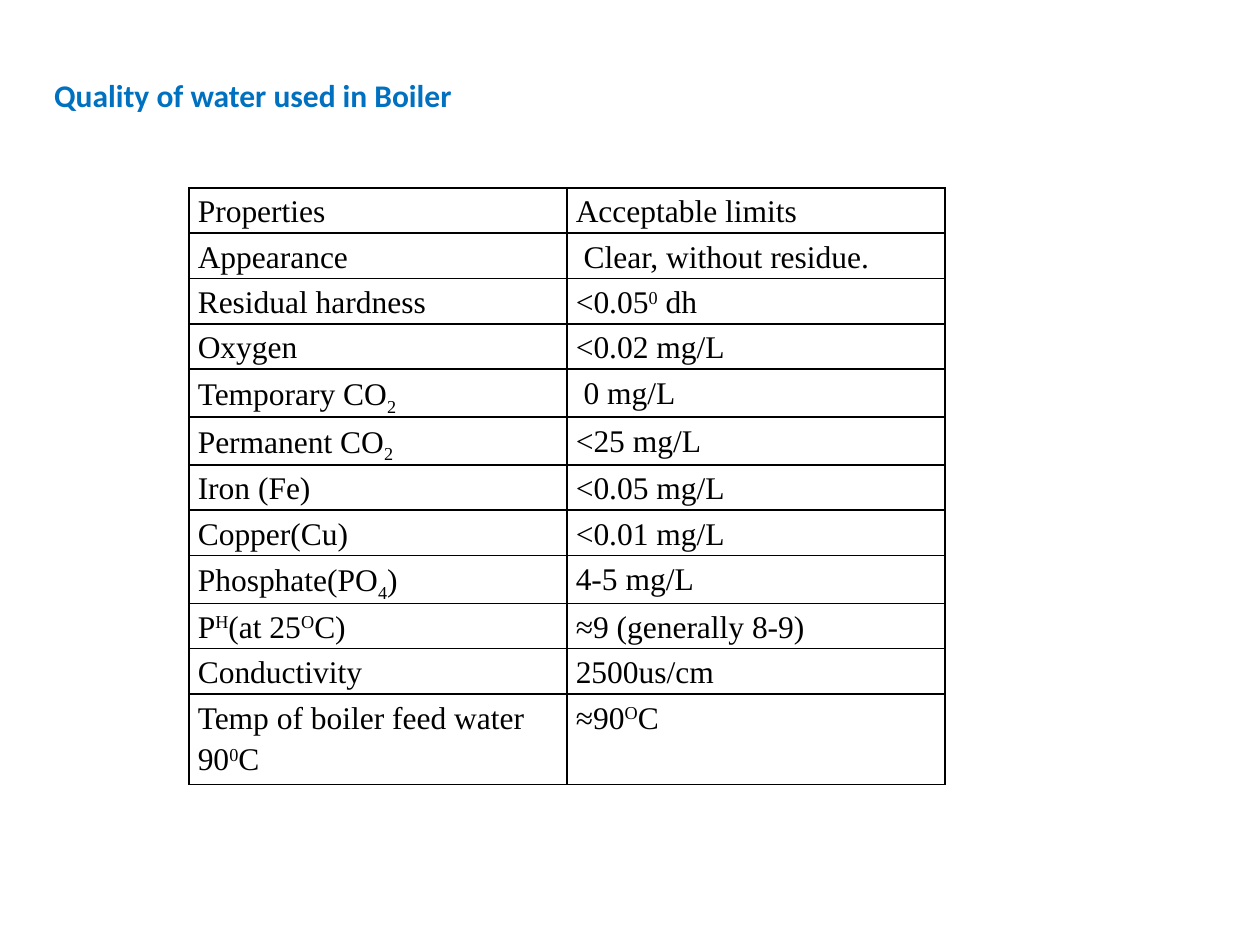
from lxml import etree
from pptx import Presentation
from pptx.dml.color import RGBColor
from pptx.enum import text
from pptx.oxml import ns
from pptx.util import Inches, Pt

COLORS = {"heading": "0070C0", "ink": "000000"}
BASELINES = {"^": "30000", "_": "-25000"}

# "|" parts the runs; a leading ^ raises a run and a leading _ lowers it.
WATER_LIMITS = [
    ("Properties", "Acceptable limits"),
    ("Appearance", " Clear, without residue."),
    ("Residual hardness", "<0.05|^0| dh"),
    ("Oxygen", "<0.02 mg/L"),
    ("Temporary CO|_2", " 0 mg/L"),
    ("Permanent CO|_2", "<25 mg/L"),
    ("Iron (Fe)", "<0.05 mg/L"),
    ("Copper(Cu)", "<0.01 mg/L"),
    ("Phosphate(PO|_4|)", "4-5 mg/L"),
    ("P|^H|(at 25|^O|C)", "≈9 (generally 8-9)"),
    ("Conductivity", "2500us/cm"),
    ("Temp of boiler feed water 90|^0|C", "≈90|^O|C"),
]


def write(frame, marked, font="Times New Roman", size=18, color="ink", bold=False):
    """Fill a text frame with runs, raising or lowering the marked ones."""
    paragraph = frame.paragraphs[0]
    paragraph.alignment = text.PP_ALIGN.LEFT
    paragraph.line_spacing = 1.2
    paragraph.space_before = Pt(0)
    for piece in marked.split("|"):
        run = paragraph.add_run()
        run.text = piece.lstrip("^_")
        run.font.name = font
        run.font.size = Pt(size)
        run.font.bold = bold
        run.font.color.rgb = RGBColor.from_string(COLORS[color])
        if piece[0] in BASELINES:
            run.font._element.set("baseline", BASELINES[piece[0]])


def outline(cell, color="ink", width=1):
    """Draw a line on all four sides of a cell."""
    properties = cell._tc.get_or_add_tcPr()
    for side in ("a:lnL", "a:lnR", "a:lnT", "a:lnB"):
        line = etree.SubElement(properties, ns.qn(side), w=str(Pt(width)))
        fill = etree.SubElement(line, ns.qn("a:solidFill"))
        etree.SubElement(fill, ns.qn("a:srgbClr"), val=COLORS[color])


deck = Presentation()
deck.slide_width, deck.slide_height = Inches(10), Inches(7.5)
slide = deck.slides.add_slide(deck.slide_layouts.get_by_name("Title Only"))

heading = slide.shapes.title
heading.left, heading.top = Inches(0.33), Inches(0.49)
heading.width, heading.height = Inches(3.38), Inches(0.44)
heading.text_frame.word_wrap = False
heading.text_frame.auto_size = text.MSO_AUTO_SIZE.NONE
heading.text_frame.vertical_anchor = text.MSO_ANCHOR.TOP
write(heading.text_frame, "Quality of water used in Boiler",
      font="Calibri", color="heading", bold=True)

row_height = Inches(0.36)
limits = slide.shapes.add_table(
    len(WATER_LIMITS), 2, Inches(1.5), Inches(1.49),
    Inches(6), row_height * (len(WATER_LIMITS) + 1)).table
for row in limits.rows:
    row.height = row_height
limits.rows[len(WATER_LIMITS) - 1].height = row_height * 2

for row, entries in zip(limits.rows, WATER_LIMITS):
    for cell, entry in zip(row.cells, entries):
        cell.margin_left = cell.margin_right = Inches(0.07)
        cell.margin_top = cell.margin_bottom = 0
        outline(cell)
        cell.fill.background()
        write(cell.text_frame, entry)

deck.save("out.pptx")
